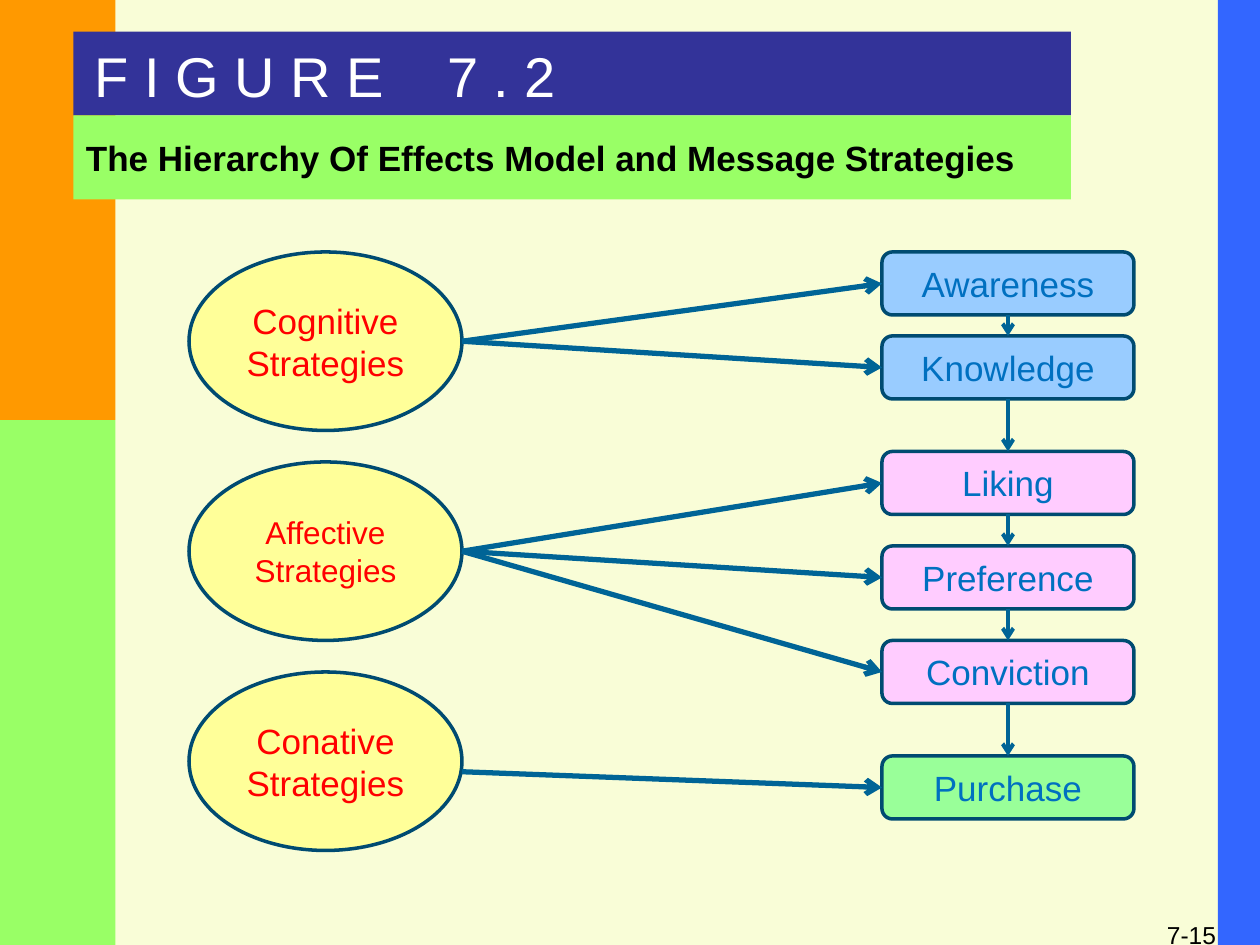
from itertools import pairwise

from lxml.etree import SubElement
from pptx import Presentation
from pptx.dml.color import RGBColor
from pptx.enum.shapes import MSO_CONNECTOR, MSO_SHAPE
from pptx.enum.text import MSO_ANCHOR, PP_ALIGN
from pptx.oxml.ns import qn
from pptx.util import Pt

PX = 7620
COLORS = {
    "page": "F9FDD7", "blue": "3366FF", "orange": "FF9900", "lime": "99FF66",
    "navy": "333399", "white": "FFFFFF", "black": "000000", "yellow": "FFFF99",
    "red": "FF0000", "outline": "004B71", "arrow": "006496", "label": "0070C0",
    "sky": "99CCFF", "pink": "FFCCFF", "mint": "99FF99",
}
STRATEGIES = [
    ("Cognitive", 20, 85, "sky", [("Awareness", 0), ("Knowledge", 80)]),
    ("Affective", 18, 85, "pink",
     [("Liking", 190), ("Preference", 280), ("Conviction", 370)]),
    ("Conative", 20, 95, "mint", [("Purchase", 480)]),
]


def color(name):
    """Return the named colour."""
    return RGBColor.from_string(COLORS[name])


def scale(*lengths):
    """Turn px lengths into EMU."""
    return [length * PX for length in lengths]


def write(shape, text, size=20, ink="black", bold=False, align=PP_ALIGN.CENTER,
          anchor=MSO_ANCHOR.MIDDLE, wrap=True, gap=None):
    """Write lines of text, with tabs splitting spans and gap widening the space between."""
    frame = shape.text_frame
    frame.word_wrap = wrap
    frame.vertical_anchor = anchor
    for index, line in enumerate(text.split("\n")):
        para = frame.add_paragraph() if index else frame.paragraphs[0]
        para.alignment = align
        for part in line.replace("\t", "\t \t").split("\t"):
            span = para.add_run()
            span.text = part
            span.font.name = "Arial"
            span.font.size = Pt(size)
            span.font.bold = bold
            span.font.color.rgb = color(ink)
            if part == " " and gap:
                span.font._element.set("spc", str(gap * 100))


def add_box(page, kind, box, fill, outline=None):
    """Add a filled preset shape."""
    shape = page.shapes.add_shape(kind, *scale(*box))
    shape.shadow.inherit = False
    shape.fill.solid()
    shape.fill.fore_color.rgb = color(fill)
    if outline:
        shape.line.color.rgb = color(outline)
        shape.line.width = Pt(2)
    else:
        shape.line.fill.background()
    return shape


def add_text(page, box, text, **style):
    """Add a text box."""
    write(page.shapes.add_textbox(*scale(*box)), text, **style)


def add_arrow(page, start, target, side, width, source=None):
    """Draw an arrow from a point, or from the foot of a source box, to a side of the target."""
    line = page.shapes.add_connector(MSO_CONNECTOR.STRAIGHT, *scale(*start, *start))
    if source:
        line.begin_connect(source, 2)
    line.end_connect(target, side)
    line.line.color.rgb = color("arrow")
    line.line.width = Pt(width)
    SubElement(line.line._get_or_add_ln(), qn("a:tailEnd"), type="arrow")
    SubElement(line._element.spPr, qn("a:effectLst"))


def add_frame(page, width, height):
    """Place the page number and the coloured side bars."""
    add_text(page, (width - 280, height - 40, 250, 60), "7-15", size=14,
             align=PP_ALIGN.RIGHT, wrap=False)
    for box, fill in [((width - 40, 0, 40, height), "blue"),
                      ((0, 0, 110, 400), "orange"),
                      ((0, 400, 110, height - 400), "lime")]:
        add_box(page, MSO_SHAPE.RECTANGLE, box, fill)


def add_banner(page, left, top, width, height):
    """Place the figure number above its title."""
    half = height // 2
    for row, fill in enumerate(["navy", "lime"]):
        add_box(page, MSO_SHAPE.RECTANGLE, (left, top + row * half, width, half), fill)
    add_text(page, (left - 10, top + 4, 500, 75), "F I G U R E\t7 . 2", size=32,
             ink="white", anchor=MSO_ANCHOR.TOP, gap=27)
    add_text(page, (left, top + half + 10, width - 30, 60),
             "The Hierarchy Of Effects Model and Message Strategies",
             bold=True, align=PP_ALIGN.LEFT)


def add_diagram(page, left, top, width):
    """Place the strategies on the left and the effect steps on the right, joined by arrows."""
    oval_width, oval_height, step_width, step_height = 260, 170, 240, 60
    steps = []
    links = []
    for row, (name, size, exit_y, fill, effects) in enumerate(STRATEGIES):
        oval_top = top + row * 200
        oval = add_box(page, MSO_SHAPE.OVAL, (left, oval_top, oval_width, oval_height),
                       "yellow", "outline")
        write(oval, f"{name}\nStrategies", size=size, ink="red")
        for effect, offset in effects:
            box = (left + width - step_width, top + offset, step_width, step_height)
            step = add_box(page, MSO_SHAPE.ROUNDED_RECTANGLE, box, fill, "outline")
            write(step, effect, ink="label")
            steps.append(step)
            links.append(((left + oval_width, oval_top + exit_y), step))
    for upper, lower in pairwise(steps):
        add_arrow(page, (left, top), lower, 0, 2.25, source=upper)
    for start, step in links:
        add_arrow(page, start, step, 1, 3)


def main():
    """Build the deck."""
    width, height = 1200, 900
    deck = Presentation()
    deck.slide_width, deck.slide_height = scale(width, height)
    page = deck.slides.add_slide(deck.slide_layouts[6])
    page.background.fill.solid()
    page.background.fill.fore_color.rgb = color("page")
    add_frame(page, width, height)
    add_banner(page, 70, 30, 950, 160)
    add_diagram(page, 180, 240, 900)
    deck.save("out.pptx")


if __name__ == "__main__":
    main()
